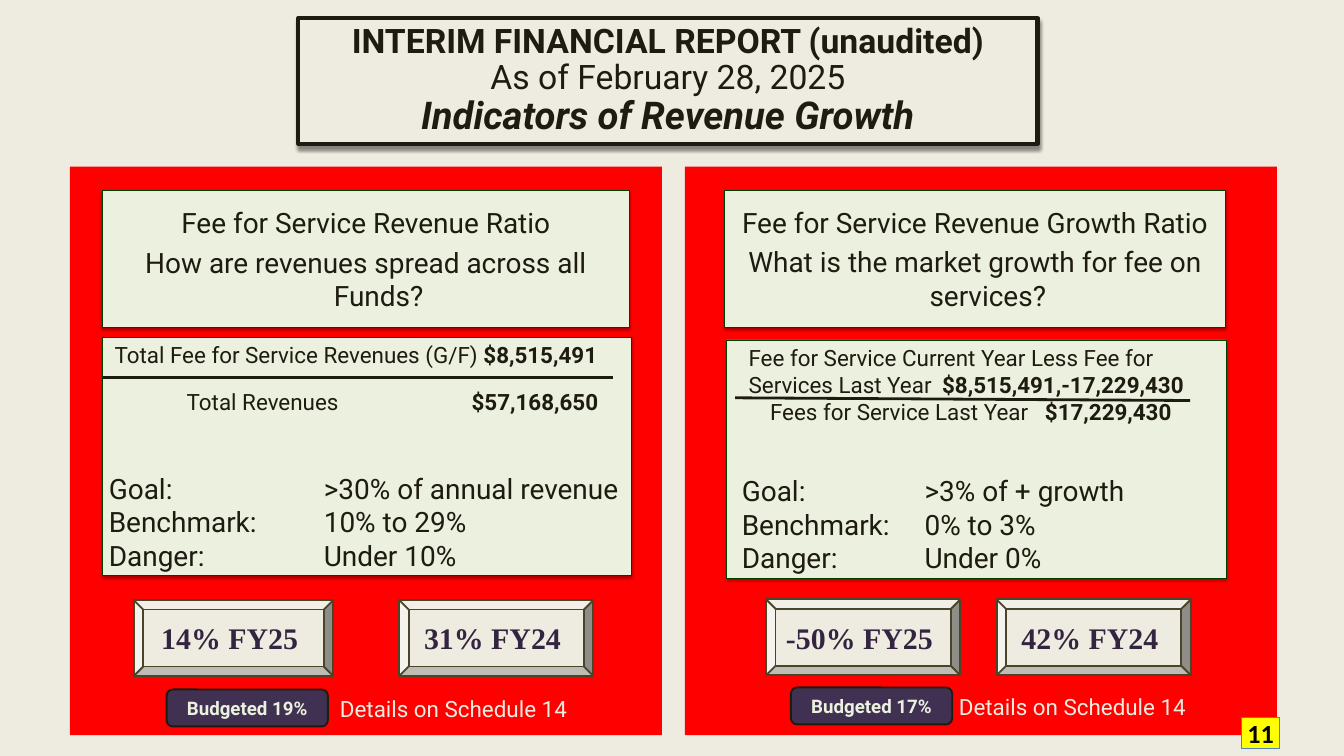
import pptx
import pptx.util
import pptx.dml.color
import pptx.enum.shapes
import pptx.enum.text
import pptx.oxml.ns
from lxml import etree

Inches = pptx.util.Inches
Pt = pptx.util.Pt
RGBColor = pptx.dml.color.RGBColor
SHAPE = pptx.enum.shapes.MSO_SHAPE
ALIGN = pptx.enum.text.PP_ALIGN
ANCHOR = pptx.enum.text.MSO_ANCHOR
qn = pptx.oxml.ns.qn

CREAM = RGBColor(0xEE, 0xEC, 0xE1)
INK = RGBColor(0x1E, 0x1C, 0x11)
RED = RGBColor(0xFF, 0x00, 0x00)
PALE_GREEN = RGBColor(0xEB, 0xF1, 0xDE)
DARK_GREEN = RGBColor(0x00, 0x3E, 0x00)
PURPLE = RGBColor(0x40, 0x31, 0x52)
DARK_PURPLE = RGBColor(0x33, 0x24, 0x40)
OLIVE = RGBColor(0x4A, 0x45, 0x2A)
YELLOW = RGBColor(0xFF, 0xFF, 0x00)
BLUE = RGBColor(0x4F, 0x81, 0xBD)
BLACK = RGBColor(0x00, 0x00, 0x00)


def style_box(box, fill, line=None, width=0.75, shadow=None):
    """Set fill, outline and an optional downward shadow (opacity %, blur pt, distance pt)."""
    box.fill.solid()
    box.fill.fore_color.rgb = fill
    if line is None:
        box.line.fill.background()
    else:
        box.line.color.rgb = line
        box.line.width = Pt(width)
    box.shadow.inherit = False
    if shadow:
        opacity, blur, distance = shadow
        effects = box._element.spPr.find(qn("a:effectLst"))
        outer = etree.SubElement(effects, qn("a:outerShdw"), blurRad=str(Pt(blur)),
                                 dist=str(Pt(distance)), dir="5400000", rotWithShape="0")
        tint = etree.SubElement(outer, qn("a:srgbClr"), val="000000")
        etree.SubElement(tint, qn("a:alpha"), val=str(opacity * 1000))


def write(box, lines, size, color=INK, font="Roboto", align=ALIGN.LEFT,
          before=0, hanging=0, tabs=()):
    """Write one paragraph per line; a line is a list of (text, bold) spans."""
    frame = box.text_frame
    frame.word_wrap = True
    for number, spans in enumerate(lines):
        para = frame.add_paragraph() if number else frame.paragraphs[0]
        para.alignment = align
        para.space_before = Pt(before if number else 0)
        properties = para._p.get_or_add_pPr()
        if hanging:
            properties.set("marL", str(Inches(hanging)))
            properties.set("indent", str(-Inches(hanging)))
        if tabs:
            stops = etree.SubElement(properties, qn("a:tabLst"))
            for stop in tabs:
                etree.SubElement(stops, qn("a:tab"), pos=str(Inches(stop)), algn="l")
        for text, bold in spans:
            span = para.add_run()
            span.text = text
            span.font.name = font
            span.font.size = Pt(size)
            span.font.bold = bold
            span.font.color.rgb = color


deck = pptx.Presentation()
deck.slide_width, deck.slide_height = Inches(20), Inches(11.25)
page = deck.slides.add_slide(deck.slide_layouts[5])
page.background.fill.solid()
page.background.fill.fore_color.rgb = CREAM
shapes = page.shapes

# Title
title = shapes.title
title.left, title.top, title.width, title.height = map(Inches, (4.44, 0.27, 11, 1.87))
style_box(title, CREAM, INK, 4.5, (43, 4, 4))
frame = title.text_frame
frame.auto_size = pptx.enum.text.MSO_AUTO_SIZE.NONE
frame.vertical_anchor = ANCHOR.MIDDLE
frame.margin_left = frame.margin_right = frame.margin_top = frame.margin_bottom = 0
write(title, [[("INTERIM FINANCIAL REPORT (unaudited)", True)]], 36.1, align=ALIGN.CENTER)
para = frame.paragraphs[0]
para.line_spacing = 0.9
for text, size, bold, italic in (("As of February 28, 2025", 36.1, False, False),
                                 ("Indicators of Revenue Growth", 41, True, True)):
    para.add_line_break()
    span = para.add_run()
    span.text = text
    span.font.name = "Roboto"
    span.font.size = Pt(size)
    span.font.bold = bold
    span.font.italic = italic
    span.font.color.rgb = INK

# Red panels
for left in (1.04, 10.19):
    panel = shapes.add_shape(SHAPE.RECTANGLE, Inches(left), Inches(2.48), Inches(8.81), Inches(8.46))
    style_box(panel, RED)

# Headings
for place, name, question in (
        ((1.52, 2.84, 7.85, 2.03), "Fee for Service Revenue Ratio",
         "How are revenues spread across all Funds?"),
        ((10.78, 2.83, 7.46, 2.04), "Fee for Service Revenue Growth Ratio",
         "What is the market growth for fee on services?")):
    heading = shapes.add_shape(SHAPE.RECTANGLE, *map(Inches, place))
    style_box(heading, PALE_GREEN, DARK_GREEN, shadow=(35, 3.1, 1.8))
    write(heading, [[(name, False)], [(question, False)]], 30,
          align=ALIGN.CENTER, before=6, hanging=0.38)

# Ratio boxes
ratio_boxes = []
for place in ((1.53, 5.02, 7.86, 3.54), (10.81, 5.06, 7.44, 3.54)):
    ratio_box = shapes.add_shape(SHAPE.RECTANGLE, *map(Inches, place))
    style_box(ratio_box, PALE_GREEN, DARK_GREEN, shadow=(35, 3.1, 1.8))
    ratio_boxes.append(ratio_box)
ratio_boxes[0].text_frame.vertical_anchor = ANCHOR.TOP
write(ratio_boxes[0],
      [[(" Total Fee for Service Revenues (G/F) ", False), ("$8,515,491", True)],
       [("\tTotal Revenues\t", False), ("$57,168,650", True)]],
      24, before=22, tabs=(1.15, 5.39))

growth = shapes.add_textbox(Inches(10.94), Inches(5.07), Inches(7.54), Inches(1.31))
growth.text_frame.margin_left = Inches(0.2)
write(growth,
      [[("Fee for Service Current Year Less Fee for Services Last Year\t", False),
        ("$8,515,491,-17,229,430", True)],
       [("\tFees for Service Last Year\t", False), ("$17,229,430", True)]],
      24, tabs=(0.32, 2.88, 4.41))

# Fraction bars
for ends in ((1.53, 5.62, 9.12, 5.62), (10.94, 5.92, 17.71, 5.96)):
    bar = shapes.add_connector(pptx.enum.shapes.MSO_CONNECTOR.STRAIGHT, *map(Inches, ends))
    bar.line.color.rgb = INK
    bar.line.width = Pt(3)
    etree.SubElement(bar._element.spPr, qn("a:effectLst"))

# Targets
for place, stop, targets in (
        ((1.52, 6.96, 7.85, 1.62), 3.2, (">30% of annual revenue", "10% to 29%", "Under 10%")),
        ((10.94, 7, 7.06, 1.62), 2.72, (">3% of + growth", "0% to 3%", "Under 0%"))):
    box = shapes.add_textbox(*map(Inches, place))
    write(box, [[(f"{label}\t{target}", False)]
                for label, target in zip(("Goal:", "Benchmark:", "Danger:"), targets)],
          30, tabs=(stop,))

# Results by year
for left, top, width, result in ((1.99, 8.93, 2.97, "14% FY25 "), (5.94, 8.93, 2.89, "31% FY24 "),
                                 (11.4, 8.92, 2.89, "-50% FY25 "), (14.83, 8.92, 2.89, "42% FY24 ")):
    plaque = shapes.add_shape(SHAPE.BEVEL, Inches(left), Inches(top), Inches(width), Inches(1.13))
    style_box(plaque, CREAM, OLIVE, 2)
    write(plaque, [[(result, True)]], 32, DARK_PURPLE, "Times New Roman", ALIGN.CENTER)

# Budget badges and schedule references
for left, top, budget, details_left in ((2.48, 10.26, "Budgeted 19%", 4.96),
                                        (11.77, 10.23, "Budgeted 17%", 14.17)):
    badge = shapes.add_shape(SHAPE.ROUNDED_RECTANGLE, Inches(left), Inches(top), Inches(2.4), Inches(0.55))
    style_box(badge, PURPLE, INK, 2)
    write(badge, [[(budget, True)]], 20, PALE_GREEN, align=ALIGN.CENTER)
    details = shapes.add_textbox(Inches(details_left), Inches(top + 0.04), Inches(3.83), Inches(0.5))
    write(details, [[("Details on Schedule 14", False)]], 24, CREAM)

# Page number
page_number = shapes.add_shape(SHAPE.RECTANGLE, Inches(18.48), Inches(10.67), Inches(0.56), Inches(0.47))
style_box(page_number, YELLOW, BLUE)
frame = page_number.text_frame
frame.margin_left = frame.margin_right = frame.margin_top = frame.margin_bottom = 0
write(page_number, [[("11", True)]], 28, BLACK, "Calibri", ALIGN.CENTER)

deck.save("out.pptx")
